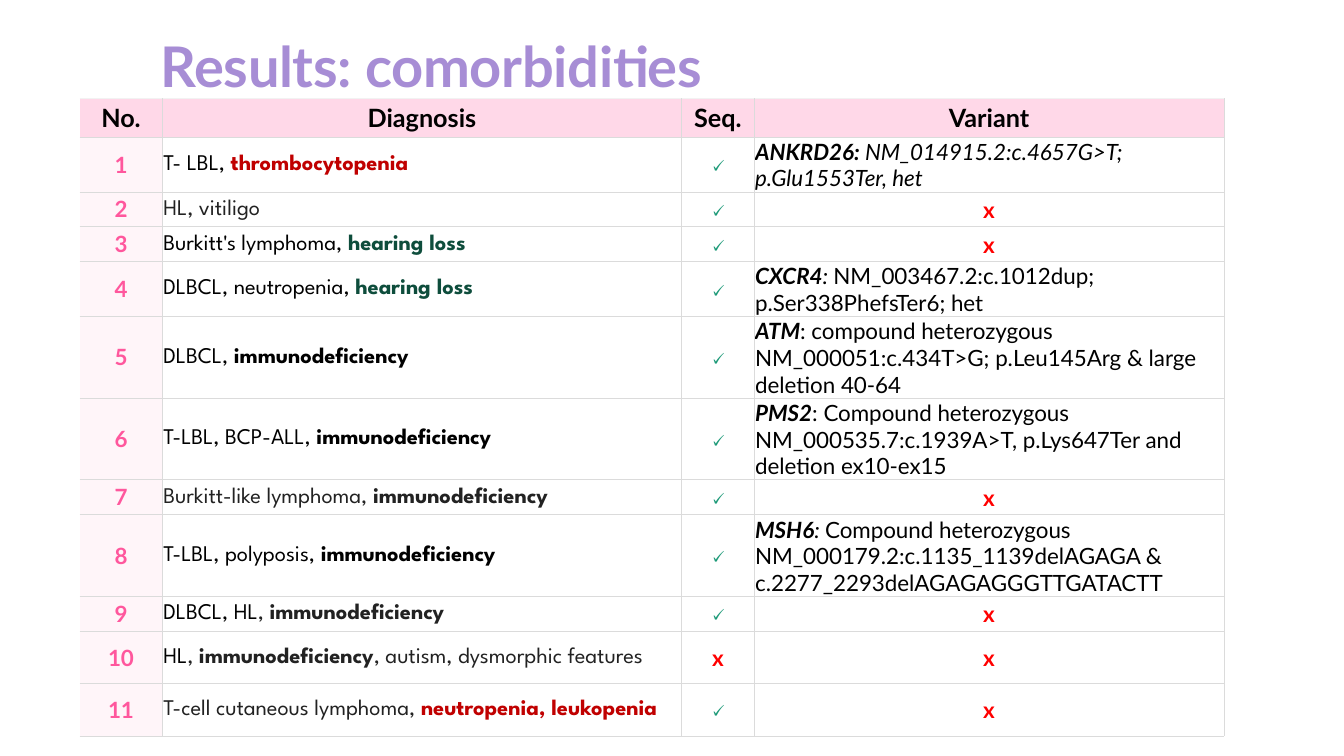
from pptx import Presentation
from pptx.dml.color import RGBColor as RGB
from pptx.enum.text import MSO_ANCHOR as Anchor, MSO_AUTO_SIZE as Fit, PP_ALIGN as Align
from pptx.oxml import parse_xml
from pptx.oxml.ns import nsdecls
from pptx.util import Inches, Pt

COLORS = {
    "title": "A78DD5", "head": "FFD8E8", "side": "FFF5F9", "white": "FFFFFF",
    "black": "000000", "dark": "222222", "pink": "FF579D", "blood": "C00000",
    "ear": "0E4D3C", "tick": "1D9A78", "cross": "FF0000",
    "line": "DBDBDB", "top": "F2F2F2",
}
LATO, SPARTAN = "Lato", "League Spartan"
STYLES = {
    "label": (LATO, "black", True, False),
    "num": (LATO, "pink", True, False),
    "tick": (LATO, "tick", True, False),
    "cross": (LATO, "cross", True, False),
    "gene": (LATO, "black", True, True),
    "slant": (LATO, "black", False, True),
    "plain": (LATO, "black", False, False),
    "text": (SPARTAN, "black", False, False),
    "gray": (SPARTAN, "dark", False, False),
    "bold": (SPARTAN, "black", True, False),
    "deep": (SPARTAN, "dark", True, False),
    "blood": (SPARTAN, "blood", True, False),
    "ear": (SPARTAN, "ear", True, False),
    "title": (LATO, "title", True, False),
}
TICK, CROSS = [("🗸", "tick")], [("x", "cross")]
LACK = "immunodeficiency"
HEADS = ["No.", "Diagnosis", "Seq.", "Variant"]
WIDTHS = [0.82, 5.15, 0.72, 4.66]
HEAD_H = 0.36
CASES = [
    (0.52, [("T- LBL, ", "text"), ("thrombocytopenia", "blood")], TICK,
     [("ANKRD26:", "gene"), (" NM_014915.2:c.4657G>T; p.Glu1553Ter, het", "slant")]),
    (0.33, [("HL, vitiligo", "gray")], TICK, CROSS),
    (0.33, [("Burkitt's lymphoma, ", "text"), ("hearing loss", "ear")], TICK, CROSS),
    (0.52, [("DLBCL, neutropenia, ", "text"), ("hearing loss", "ear")], TICK,
     [("CXCR4", "gene"), (": ", "slant"),
      ("NM_003467.2:c.1012dup; p.Ser338PhefsTer6; het", "plain")]),
    (0.78, [("DLBCL, ", "text"), (LACK, "bold")], TICK,
     [("ATM", "gene"), (": compound heterozygous NM_000051:c.434T>G; "
                        "p.Leu145Arg & large deletion 40-64", "plain")]),
    (0.78, [("T-LBL, BCP-ALL, ", "text"), (LACK, "bold")], TICK,
     [("PMS2", "gene"), (": Compound heterozygous NM_000535.7:c.1939A>T, "
                         "p.Lys647Ter and deletion ex10-ex15", "plain")]),
    (0.33, [("Burkitt-like lymphoma, ", "gray"), (LACK, "deep")], TICK, CROSS),
    (0.78, [("T-LBL, polyposis, ", "text"), (LACK, "bold")], TICK,
     [("MSH6", "gene"), (": ", "slant"),
      ("Compound heterozygous NM_000179.2:c.1135_1139delAGAGA & "
       "c.2277_2293delAGAGAGGGTTGATACTT", "plain")]),
    (0.33, [("DLBCL, HL", "text"), (", ", "gray"), (LACK, "deep")], TICK, CROSS),
    (0.52, [("HL", "text"), (", ", "gray"), (LACK, "deep"),
            (", autism, dysmorphic features", "gray")], CROSS, CROSS),
    (0.52, [("T-cell cutaneous lymphoma, ", "gray"),
            ("neutropenia, leukopenia", "blood")], TICK, CROSS),
]


def add_runs(para, runs, size):
    """Add styled runs to a paragraph."""
    for text, style in runs:
        run = para.add_run()
        run.text = text
        font = run.font
        font.name, color, font.bold, font.italic = STYLES[style]
        font.size = Pt(size)
        font.color.rgb = RGB.from_string(COLORS[color])


def add_title(slide, text):
    """Add the slide title."""
    box = slide.shapes.add_textbox(Inches(1.59), Inches(0.31), Inches(5.6), Inches(0.67))
    frame = box.text_frame
    frame.word_wrap = False
    frame.auto_size = Fit.SHAPE_TO_FIT_TEXT
    frame.vertical_anchor = Anchor.BOTTOM
    frame.margin_left = frame.margin_right = frame.margin_top = frame.margin_bottom = 0
    para = frame.paragraphs[0]
    add_runs(para, [(text, "title")], 40)
    para.runs[0].font._element.set("spc", "-20")


def add_edge(cell, side, color):
    """Draw one cell border, or clear it when no colour is given."""
    paint = f'<a:solidFill><a:srgbClr val="{COLORS[color]}"/></a:solidFill>' if color else "<a:noFill/>"
    cell._tc.get_or_add_tcPr().append(parse_xml(
        f'<a:ln{side} {nsdecls("a")} w="{Pt(0.5)}">{paint}</a:ln{side}>'))


def fill_cell(cell, runs, size, fill, pad, left="line", top="line"):
    """Set the text, margins, borders and fill of a cell."""
    cell.margin_left, cell.margin_top, cell.margin_right, cell.margin_bottom = map(Inches, pad)
    cell.vertical_anchor = Anchor.MIDDLE
    for side, color in zip("LRTB", (left, "line", top, "line")):
        add_edge(cell, side, color)
    cell.fill.solid()
    cell.fill.fore_color.rgb = RGB.from_string(COLORS[fill])
    para = cell.text_frame.paragraphs[0]
    centred = runs[0][1] in ("label", "num", "tick", "cross")
    para.alignment = Align.CENTER if centred else Align.LEFT
    add_runs(para, runs, size)


def add_cases(slide):
    """Add the table of cases."""
    heights = [HEAD_H] + [case[0] for case in CASES]
    table = slide.shapes.add_table(
        len(heights), len(WIDTHS), Inches(0.79), Inches(0.98),
        Inches(sum(WIDTHS)), Inches(sum(heights))).table
    table.first_row = table.horz_banding = False
    for col, width in zip(table.columns, WIDTHS):
        col.width = Inches(width)
    for row, height in zip(table.rows, heights):
        row.height = Inches(height)
    wide, slim = (0.08, 0.04, 0.08, 0.04), (0.01, 0.01, 0.01, 0)
    for c, head in enumerate(HEADS):
        fill_cell(table.cell(0, c), [(head, "label")], 18, "head", wide,
                  "line" if c else None, "top")
    for r, case in enumerate(CASES, 1):
        fill_cell(table.cell(r, 0), [(str(r), "num")], 16, "side", wide, None)
        for c, runs in enumerate(case[1:], 1):
            fill_cell(table.cell(r, c), runs, 16, "white", slim)
    table.cell(8, 3).vertical_anchor = Anchor.BOTTOM


def main():
    """Build and save the slide."""
    deck = Presentation()
    deck.slide_width, deck.slide_height = Inches(13.33), Inches(7.5)
    slide = deck.slides.add_slide(deck.slide_layouts[6])
    add_title(slide, "Results: comorbidities")
    add_cases(slide)
    deck.save("out.pptx")


if __name__ == "__main__":
    main()
